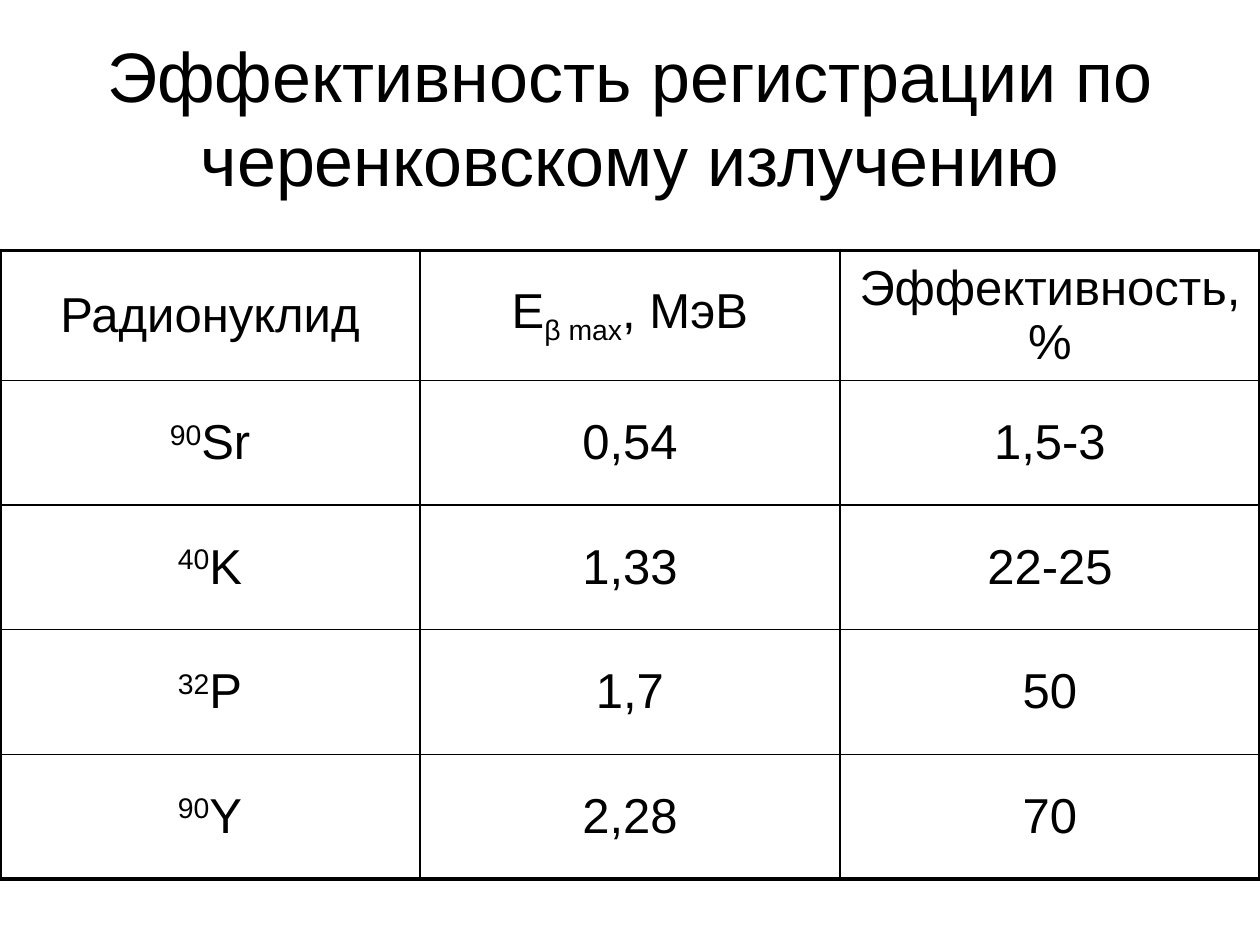
from lxml.etree import SubElement
from pptx import Presentation
from pptx.dml.color import RGBColor
from pptx.enum.text import MSO_ANCHOR as Anchor, PP_ALIGN as Align
from pptx.oxml.ns import qn
from pptx.util import Pt

BLACK = RGBColor(0, 0, 0)
FONT = "Arial"
THIN, THICK = Pt(1), Pt(2.25)
SUB, SUPER = -25000, 30000
HEADER = [
    [("Радионуклид", 0)],
    [("E", 0), ("β max", SUB), (", МэВ", 0)],
    [("Эффективность, %", 0)],
]
NUCLIDES = [
    ("90", "Sr", "0,54", "1,5-3"),
    ("40", "K", "1,33", "22-25"),
    ("32", "P", "1,7", "50"),
    ("90", "Y", "2,28", "70"),
]


def write_text(frame, parts, size, space_before=0):
    """Write centred text from (text, baseline) parts into a text frame."""
    frame.word_wrap = True
    para = frame.paragraphs[0]
    para.alignment = Align.CENTER
    para.space_before = Pt(space_before)
    for text, baseline in parts:
        span = para.add_run()
        span.text = text
        span.font.name = FONT
        span.font.size = Pt(size)
        span.font.bold = False
        span.font.color.rgb = BLACK
        if baseline:
            span.font._element.set("baseline", str(baseline))


def add_border(cell, side, width):
    """Draw one solid edge of a table cell."""
    properties = cell._tc.get_or_add_tcPr()
    line = SubElement(properties, qn(f"a:ln{side}"), w=str(width))
    fill = SubElement(line, qn("a:solidFill"))
    SubElement(fill, qn("a:srgbClr"), val=str(BLACK))


def add_title(page, text):
    """Add the centred slide heading."""
    box = page.shapes.add_textbox(Pt(36), Pt(21.6), Pt(648), Pt(90))
    box.text_frame.vertical_anchor = Anchor.MIDDLE
    write_text(box.text_frame, [(text, 0)], size=40)


def add_grid(page, rows):
    """Add the table with thick outer and thin inner borders."""
    row_count, column_count = len(rows), len(rows[0])
    frame = page.shapes.add_table(
        row_count, column_count, Pt(0), Pt(143), Pt(720), Pt(359.2))
    table = frame.table
    table.first_row = table.horz_banding = False
    for column in table.columns:
        column.width = Pt(240)
    for index, row in enumerate(table.rows):
        row.height = Pt(71.2) if index else Pt(74.4)
    for r, row in enumerate(rows):
        for c, parts in enumerate(row):
            cell = table.cell(r, c)
            cell.vertical_anchor = Anchor.MIDDLE
            write_text(cell.text_frame, parts, size=28, space_before=5.6)
            outer = {"L": c == 0, "R": c == column_count - 1,
                     "T": r == 0, "B": r == row_count - 1}
            for side, is_outer in outer.items():
                add_border(cell, side, THICK if is_outer else THIN)
            cell.fill.background()


def main():
    """Build the slide and save it."""
    deck = Presentation()
    deck.slide_width, deck.slide_height = Pt(720), Pt(540)
    page = deck.slides.add_slide(deck.slide_layouts[6])
    add_title(page, "Эффективность регистрации по черенковскому излучению")
    body = [
        [[(mass, SUPER), (symbol, 0)], [(energy, 0)], [(efficiency, 0)]]
        for mass, symbol, energy, efficiency in NUCLIDES
    ]
    add_grid(page, [HEADER] + body)
    deck.save("out.pptx")


if __name__ == "__main__":
    main()
